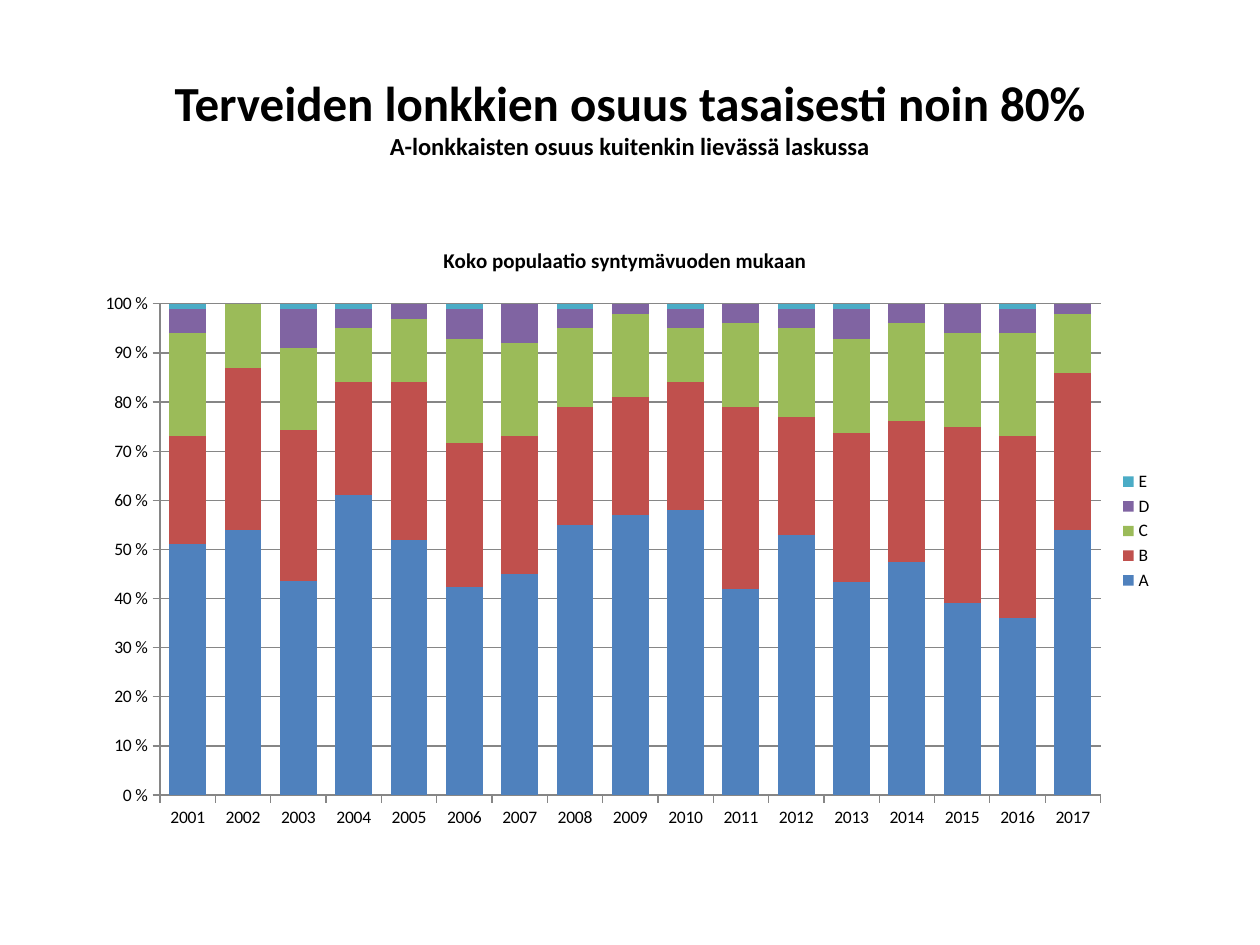
import pptx
import pptx.util
import pptx.chart.data
import pptx.dml.color
import pptx.enum.chart
import pptx.enum.text
import pptx.oxml
import pptx.oxml.ns

Pt = pptx.util.Pt
kinds = pptx.enum.chart


def color(code):
    return pptx.dml.color.RGBColor.from_string(code)


def style(font, size, bold=False):
    font.name = "Calibri"
    font.size = Pt(size)
    font.bold = bold
    font.color.rgb = color("000000")


deck = pptx.Presentation()
deck.slide_width = pptx.util.Inches(10)
deck.slide_height = pptx.util.Inches(7.5)
wide, high = deck.slide_width, deck.slide_height
slide = deck.slides.add_slide(deck.slide_layouts[6])

# Heading
box = slide.shapes.add_textbox(
    int(wide * 0.05), int(high * 0.04), int(wide * 0.9), int(high / 6))
frame = box.text_frame
frame.word_wrap = True
frame.vertical_anchor = pptx.enum.text.MSO_ANCHOR.MIDDLE
para = frame.paragraphs[0]
para.alignment = pptx.enum.text.PP_ALIGN.CENTER
run = para.add_run()
run.text = "Terveiden lonkkien osuus tasaisesti noin 80%"
style(run.font, 28, True)
para.add_line_break()
run = para.add_run()
run.text = "A-lonkkaisten osuus kuitenkin lievässä laskussa"
style(run.font, 14, True)

# Shares of hip grades by year of birth
grades = [
    ("A", "4F81BD", [51, 54, 44, 61, 52, 42, 45, 55, 57, 58, 42, 53, 43, 48, 39, 36, 54]),
    ("B", "C0504D", [22, 33, 31, 23, 32, 29, 28, 24, 24, 26, 37, 24, 30, 29, 36, 37, 32]),
    ("C", "9BBB59", [21, 13, 17, 11, 13, 21, 19, 16, 17, 11, 17, 18, 19, 20, 19, 21, 12]),
    ("D", "8064A2", [5, 0, 8, 4, 3, 6, 8, 4, 2, 4, 4, 4, 6, 4, 6, 5, 2]),
    ("E", "4BACC6", [1, 0, 1, 1, 0, 1, 0, 1, 0, 1, 0, 1, 1, 0, 0, 1, 0]),
]
data = pptx.chart.data.CategoryChartData()
data.categories = [str(year) for year in range(2001, 2018)]
for name, _, shares in grades:
    data.add_series(name, shares)

chart = slide.shapes.add_chart(
    kinds.XL_CHART_TYPE.COLUMN_STACKED_100,
    int(wide * 0.067), int(high * 0.237), int(wide * 0.858), int(high * 0.65),
    data).chart
style(chart.font, 10)

chart.has_title = True
run = chart.chart_title.text_frame.paragraphs[0].add_run()
run.text = "Koko populaatio syntymävuoden mukaan"
style(run.font, 12, True)
chart.chart_title.include_in_layout = False

chart.has_legend = True
chart.legend.position = kinds.XL_LEGEND_POSITION.RIGHT
chart.legend.include_in_layout = False

plot = chart.plots[0]
plot.gap_width = 50
plot.overlap = 100
plot.vary_by_categories = False
for series, (_, code, _) in zip(plot.series, grades):
    series.format.fill.solid()
    series.format.fill.fore_color.rgb = color(code)

years, scale = chart.category_axis, chart.value_axis
scale.has_major_gridlines = True
scale.minimum_scale, scale.maximum_scale, scale.major_unit = 0, 1, 0.1
scale.tick_labels.number_format = "0 %"
scale.tick_labels.number_format_is_linked = False
for axis in (years, scale):
    axis.major_tick_mark = kinds.XL_TICK_MARK.OUTSIDE
    axis.minor_tick_mark = kinds.XL_TICK_MARK.NONE
for part in (years, scale, scale.major_gridlines):
    part.format.line.color.rgb = color("868686")
    part.format.line.width = Pt(0.75)

# Fixed place of the plot, as shares of the chart
area = chart._chartSpace.chart.plotArea
for old in area.findall(pptx.oxml.ns.qn("c:layout")):
    area.remove(old)
rules = [("layoutTarget", "inner"), ("xMode", "edge"), ("yMode", "edge"),
         ("x", 0.07), ("y", 0.13), ("w", 0.87), ("h", 0.8)]
tags = "".join(f'<c:{tag} val="{val}"/>' for tag, val in rules)
area.insert(0, pptx.oxml.parse_xml(
    f'<c:layout {pptx.oxml.ns.nsdecls("c")}><c:manualLayout>{tags}'
    '</c:manualLayout></c:layout>'))

deck.save("out.pptx")
